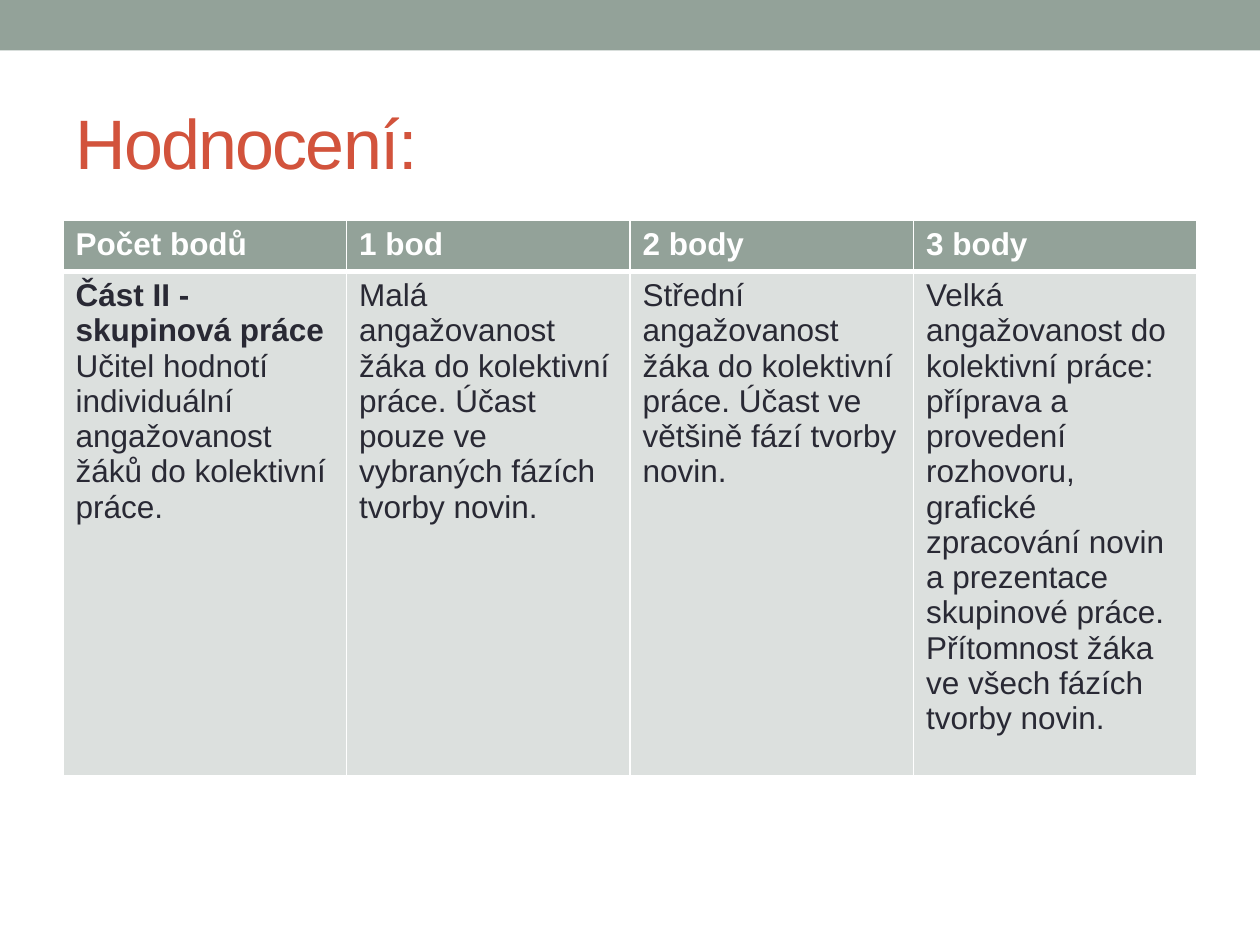
"""Build a slide with a grading table for group work."""
import pptx
import pptx.dml.color
import pptx.enum.shapes
import pptx.enum.text
import pptx.oxml
import pptx.oxml.ns
import pptx.util

Pt = pptx.util.Pt
COLORS = {"sage": "93A299", "rust": "D2533C", "ink": "292934", "pale": "DCE0DE", "white": "FFFFFF"}
FONT = "Arial"
HEADINGS = ["Počet bodů", "1 bod", "2 body", "3 body"]
CRITERIA = [
    [("Část II - skupinová práce ", True),
     ("Učitel hodnotí individuální angažovanost žáků do kolektivní práce.", False)],
    [("Malá angažovanost žáka do kolektivní práce. Účast pouze ve vybraných fázích tvorby novin.", False)],
    [("Střední angažovanost žáka do kolektivní práce. Účast ve většině fází tvorby novin.", False)],
    [("Velká angažovanost do kolektivní práce: příprava a provedení rozhovoru, grafické zpracování "
      "novin a prezentace skupinové práce. Přítomnost žáka ve všech fázích tvorby novin.", False)],
]


def rgb(name):
    return pptx.dml.color.RGBColor.from_string(COLORS[name])


def style_font(font, size, color):
    font.name = FONT
    font.size = Pt(size)
    font.color.rgb = rgb(color)


def add_band(slide):
    band = slide.shapes.add_shape(
        pptx.enum.shapes.MSO_SHAPE.RECTANGLE, 0, 0, Pt(720), Pt(28.8))
    band.shadow.inherit = False
    band.fill.solid()
    band.fill.fore_color.rgb = rgb("sage")
    band.line.fill.background()


def add_title(slide, text):
    frame = slide.shapes.add_textbox(Pt(36), Pt(42), Pt(648), Pt(78)).text_frame
    frame.word_wrap = True
    frame.vertical_anchor = pptx.enum.text.MSO_ANCHOR.MIDDLE
    heading = frame.paragraphs[0]
    run = heading.add_run()
    run.text = text
    style_font(heading.font, 40, "rust")
    run.font._element.set("spc", "-100")


def set_borders(cell, widths):
    properties = cell._tc.get_or_add_tcPr()
    for position, (side, width) in enumerate(widths.items()):
        properties.insert(position, pptx.oxml.parse_xml(
            f'<a:{side} {pptx.oxml.ns.nsdecls("a")} w="{Pt(width)}"><a:solidFill>'
            f'<a:srgbClr val="{COLORS["white"]}"/></a:solidFill></a:{side}>'))


def fill_cell(cell, runs, fill, color, widths):
    cell.fill.solid()
    cell.fill.fore_color.rgb = rgb(fill)
    paragraph = cell.text_frame.paragraphs[0]
    style_font(paragraph.font, 18, color)
    for text, bold in runs:
        run = paragraph.add_run()
        run.text = text
        run.font.bold = bold
    set_borders(cell, widths)


def add_grading_table(slide):
    grading = slide.shapes.add_table(
        2, len(HEADINGS), Pt(36), Pt(126), Pt(648), Pt(297.7)).table
    grading.rows[0].height = Pt(29.2)
    grading.rows[1].height = Pt(268.5)
    for column, (heading, criterion) in enumerate(zip(HEADINGS, CRITERIA)):
        grading.columns[column].width = Pt(162)
        fill_cell(grading.cell(0, column), [(heading, True)], "sage", "white",
                  {"lnL": 1, "lnR": 1, "lnT": 1, "lnB": 3})
        fill_cell(grading.cell(1, column), criterion, "pale", "ink",
                  {"lnL": 1, "lnR": 1, "lnT": 3, "lnB": 1})


def main():
    deck = pptx.Presentation()
    deck.slide_width = Pt(720)
    deck.slide_height = Pt(540)
    slide = deck.slides.add_slide(deck.slide_layouts[6])
    add_band(slide)
    add_title(slide, "Hodnocení:")
    add_grading_table(slide)
    deck.save("out.pptx")


if __name__ == "__main__":
    main()
